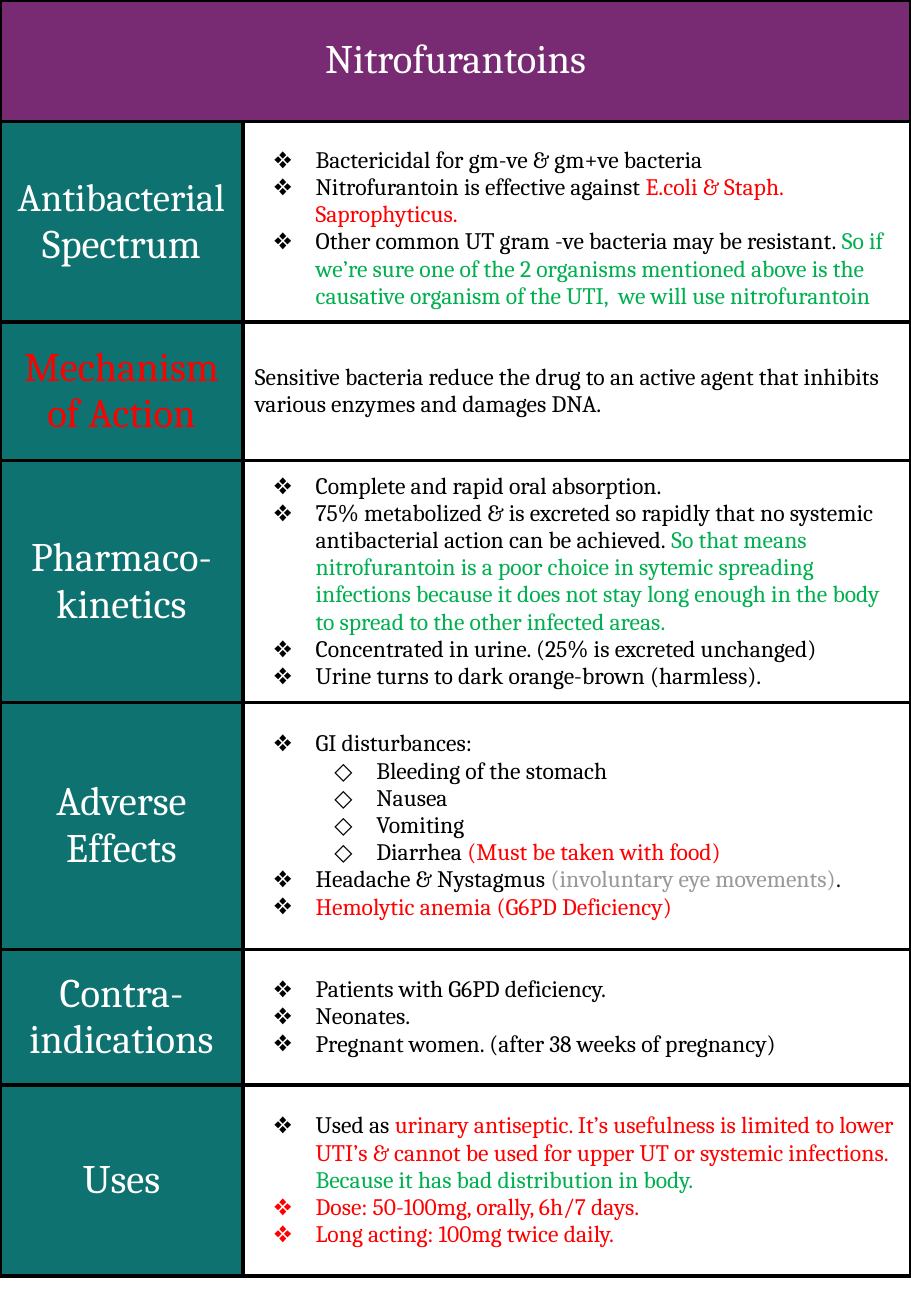
from collections import namedtuple

from lxml.etree import SubElement
from pptx import Presentation
from pptx.dml.color import RGBColor
from pptx.enum.text import MSO_ANCHOR, PP_ALIGN
from pptx.oxml.ns import qn
from pptx.util import Cm, Pt

BLACK = RGBColor(0x00, 0x00, 0x00)
WHITE = RGBColor(0xFF, 0xFF, 0xFF)
RED = RGBColor(0xFF, 0x00, 0x00)
GREEN = RGBColor(0x00, 0xB0, 0x50)
GREY = RGBColor(0x99, 0x99, 0x99)
PURPLE = RGBColor(0x78, 0x2A, 0x72)
TEAL = RGBColor(0x0E, 0x72, 0x70)

FONT = "Cambria"
LABEL_SIZE, BODY_SIZE = 24, 14

Style = namedtuple("Style", "align bullet color level spacing")
LABEL = Style(PP_ALIGN.CENTER, None, None, 0, None)
PLAIN = Style(PP_ALIGN.LEFT, None, None, 0, None)
ITEM = Style(PP_ALIGN.LEFT, "❖", BLACK, 0, None)
LEAD = ITEM._replace(align=PP_ALIGN.JUSTIFY, spacing=1.5)
RED_ITEM = ITEM._replace(color=RED)
SUB = ITEM._replace(bullet="◇", level=1)

TITLE = "Nitrofurantoins"
TITLE_HEIGHT = 2.54
COLUMN_WIDTHS = [5.08, 13.97]

SECTIONS = [
    (4.19, [[("Antibacterial", WHITE, 23), (" Spectrum", WHITE)]], [
        (LEAD, [("Bactericidal for gm-ve & gm+ve bacteria", BLACK)]),
        (ITEM, [("Nitrofurantoin is effective against", BLACK),
                (" E.coli & Staph. Saprophyticus.", RED)]),
        (ITEM, [("Other common UT gram -ve bacteria may be resistant. ", BLACK),
                ("So if we’re sure one of the 2 organisms mentioned above is the "
                 "causative organism of the UTI,  we will use nitrofurantoin", GREEN)]),
    ]),
    (2.9, [[("Mechanism of Action", RED)]], [
        (PLAIN, [("Sensitive bacteria reduce the drug to an active agent that "
                  "inhibits various enzymes and damages DNA.", BLACK)]),
    ]),
    (5.05, [[("Pharmaco-", WHITE)], [("kinetics", WHITE)]], [
        (ITEM, [("Complete and rapid oral absorption.", BLACK)]),
        (ITEM, [("75% metabolized & is excreted so rapidly that no systemic "
                 "antibacterial action can be achieved.", BLACK),
                (" So that means nitrofurantoin is a poor choice in sytemic spreading "
                 "infections because it does not stay long enough in the body to "
                 "spread to the other infected areas.", GREEN)]),
        (ITEM, [("Concentrated in urine. (25% is excreted unchanged)", BLACK)]),
        (ITEM, [("Urine turns to dark orange-brown (harmless).", BLACK)]),
    ]),
    (5.16, [[("Adverse Effects", WHITE)]], [
        (ITEM, [("GI disturbances:", BLACK)]),
        (SUB, [("Bleeding of the stomach", BLACK)]),
        (SUB, [("Nausea", BLACK)]),
        (SUB, [("Vomiting", BLACK)]),
        (SUB, [("Diarrhea ", BLACK), ("(Must be taken with food)", RED)]),
        (ITEM, [("Headache & Nystagmus", BLACK),
                (" (involuntary eye movements)", GREY), (".", BLACK)]),
        (ITEM, [("Hemolytic anemia (G6PD Deficiency)", RED)]),
    ]),
    (2.84, [[("Contra-", WHITE)], [("indications", WHITE)]], [
        (ITEM, [("Patients with G6PD deficiency.", BLACK)]),
        (ITEM, [("Neonates.", BLACK)]),
        (ITEM, [("Pregnant women. (after 38 weeks of pregnancy)", BLACK)]),
    ]),
    (3.99, [[("Uses", WHITE)]], [
        (ITEM, [("Used as ", BLACK),
                ("urinary antiseptic. It’s usefulness is limited to lower UTI’s & "
                 "cannot be used for upper UT or systemic infections.", RED),
                (" Because it has bad distribution in body.", GREEN)]),
        (RED_ITEM, [("Dose: 50-100mg, orally, 6h/7 days.", RED)]),
        (RED_ITEM, [("Long acting: 100mg twice daily.", RED)]),
    ]),
]


def add_color(parent, color):
    SubElement(parent, qn("a:srgbClr"), val=str(color))


def set_borders(cell):
    tcPr = cell._tc.get_or_add_tcPr()
    for side in ("a:lnL", "a:lnR", "a:lnT", "a:lnB"):
        ln = SubElement(tcPr, qn(side), w=str(Pt(2.25)))
        add_color(SubElement(ln, qn("a:solidFill")), BLACK)


def set_bullet(p, style):
    pPr = p._p.get_or_add_pPr()
    pPr.set("marL", str(Cm(1.27 * (style.level + 1))))
    pPr.set("indent", str(Cm(-0.88)))
    add_color(SubElement(pPr, qn("a:buClr")), style.color)
    SubElement(pPr, qn("a:buFont"), typeface=FONT)
    SubElement(pPr, qn("a:buChar"), char=style.bullet)


def write_cell(cell, paragraphs, size, fill=None):
    cell.vertical_anchor = MSO_ANCHOR.MIDDLE
    cell.margin_left = cell.margin_right = Cm(0.25)
    cell.margin_top = cell.margin_bottom = Cm(0.25)
    set_borders(cell)
    if fill is None:
        cell.fill.background()
    else:
        cell.fill.solid()
        cell.fill.fore_color.rgb = fill
    tf = cell.text_frame
    for i, (style, runs) in enumerate(paragraphs):
        p = tf.add_paragraph() if i else tf.paragraphs[0]
        p.alignment = style.align
        p.level = style.level
        if style.spacing:
            p.line_spacing = style.spacing
        if style.bullet:
            set_bullet(p, style)
        for text, color, *own_size in runs:
            r = p.add_run()
            r.text = text
            r.font.name = FONT
            r.font.size = Pt(own_size[0] if own_size else size)
            r.font.color.rgb = color


def main():
    prs = Presentation()
    prs.slide_width, prs.slide_height = Cm(19.05), Cm(27.51)
    s = prs.slides.add_slide(prs.slide_layouts[6])

    heights = [TITLE_HEIGHT] + [section[0] for section in SECTIONS]
    table = s.shapes.add_table(len(heights), len(COLUMN_WIDTHS), 0, 0,
                               Cm(sum(COLUMN_WIDTHS)), Cm(sum(heights))).table
    table.first_row = table.horz_banding = False
    for column, width in zip(table.columns, COLUMN_WIDTHS):
        column.width = Cm(width)
    for row, height in zip(table.rows, heights):
        row.height = Cm(height)

    table.cell(0, 0).merge(table.cell(0, 1))
    write_cell(table.cell(0, 0), [(LABEL, [(TITLE, WHITE)])], LABEL_SIZE, PURPLE)
    set_borders(table.cell(0, 1))
    for i, (_, label, body) in enumerate(SECTIONS, start=1):
        write_cell(table.cell(i, 0), [(LABEL, runs) for runs in label], LABEL_SIZE, TEAL)
        write_cell(table.cell(i, 1), body, BODY_SIZE)

    prs.save("out.pptx")


if __name__ == "__main__":
    main()
